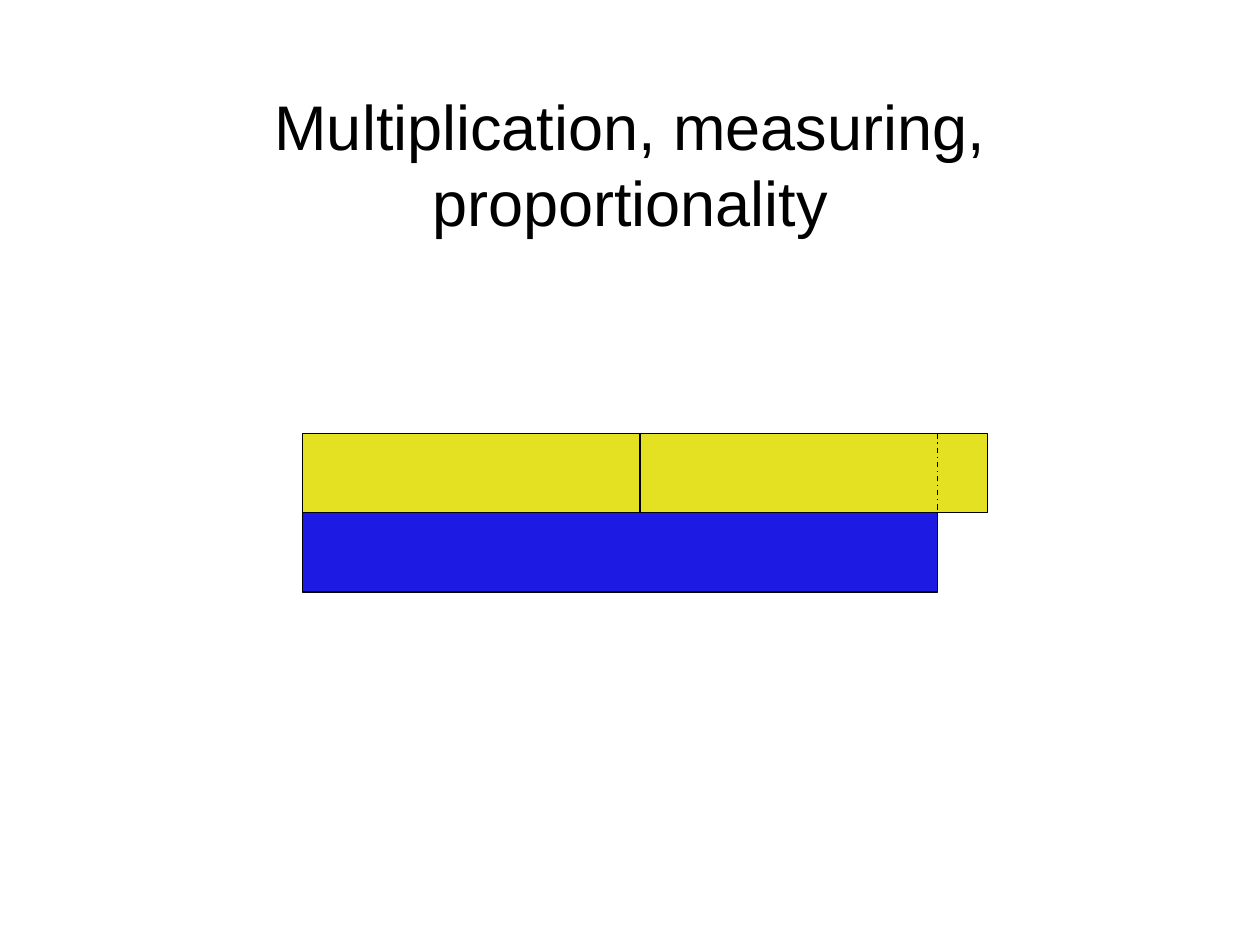
from pptx import Presentation
from pptx.dml.color import RGBColor
from pptx.enum.dml import MSO_LINE
from pptx.enum.shapes import MSO_CONNECTOR, MSO_SHAPE
from pptx.enum.text import MSO_ANCHOR, MSO_AUTO_SIZE, PP_ALIGN
from pptx.oxml.ns import qn
from pptx.util import Inches, Pt
from lxml.etree import SubElement

BLACK = RGBColor(0x00, 0x00, 0x00)
YELLOW = RGBColor(0xE3, 0xE1, 0x22)
BLUE = RGBColor(0x1D, 0x1B, 0xE3)


def format_title(title, left, top, width, height):
    title.left, title.top, title.width, title.height = left, top, width, height
    frame = title.text_frame
    frame.word_wrap = True
    frame.auto_size = MSO_AUTO_SIZE.NONE
    frame.vertical_anchor = MSO_ANCHOR.MIDDLE
    paragraph = frame.paragraphs[0]
    paragraph.alignment = PP_ALIGN.CENTER
    run = paragraph.add_run()
    run.text = "Multiplication, measuring, proportionality"
    run.font.name = "Arial"
    run.font.size = Pt(36)
    run.font.color.rgb = BLACK


def outline(line):
    line.color.rgb = BLACK
    line.width = Pt(0.75)


def add_bar(slide, left, top, width, height, color):
    shape = slide.shapes.add_shape(MSO_SHAPE.RECTANGLE, left, top, width, height)
    shape.shadow.inherit = False
    shape.fill.solid()
    shape.fill.fore_color.rgb = color
    outline(shape.line)


def add_comparison(slide, left, top, unit_widths, measured_width, height):
    middle = top + height
    add_bar(slide, left, middle, measured_width, height, BLUE)
    unit_left = left
    for width in unit_widths:
        add_bar(slide, unit_left, top, width, height, YELLOW)
        unit_left += width

    mark = left + measured_width
    connector = slide.shapes.add_connector(
        MSO_CONNECTOR.STRAIGHT, mark, top, mark, middle)
    outline(connector.line)
    connector.line.dash_style = MSO_LINE.DASH_DOT
    SubElement(connector._element.spPr, qn("a:effectLst"))


def main():
    presentation = Presentation()
    presentation.slide_width = Inches(10)
    presentation.slide_height = Inches(7.5)
    slide = presentation.slides.add_slide(presentation.slide_layouts[5])
    format_title(slide.shapes.title,
                 Inches(0.75), Inches(0.67), Inches(8.5), Inches(1.25))
    add_comparison(slide, Inches(2.4), Inches(3.44),
                   [Inches(2.68), Inches(2.76)], Inches(5.04), Inches(0.63))
    presentation.save("out.pptx")


if __name__ == "__main__":
    main()
